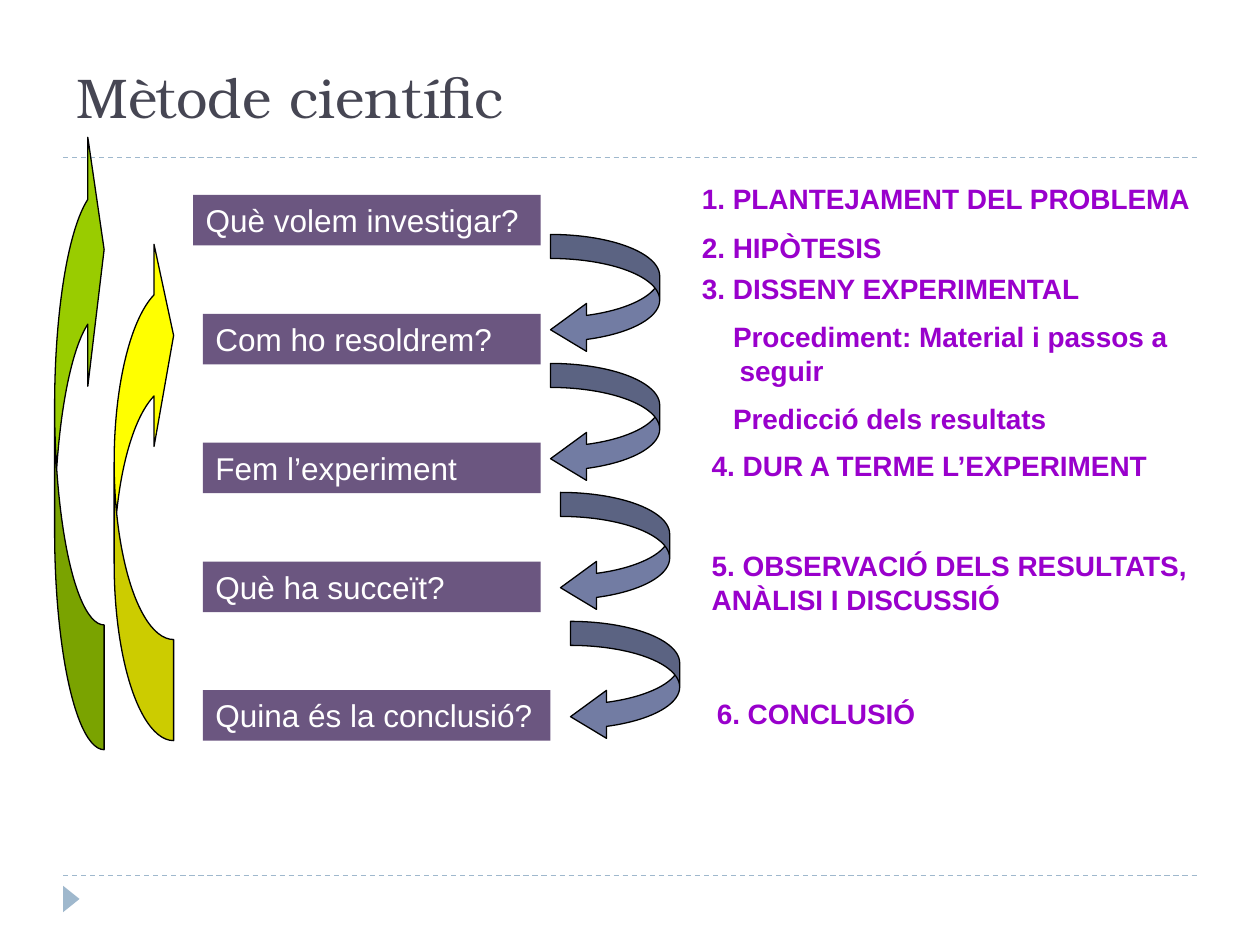
from lxml import etree
from pptx import Presentation
from pptx.dml.color import RGBColor
from pptx.enum.dml import MSO_LINE
from pptx.enum.shapes import MSO_CONNECTOR, MSO_SHAPE
from pptx.enum.text import MSO_ANCHOR, PP_ALIGN
from pptx.oxml.ns import qn
from pptx.util import Pt

RECTANGLE = MSO_SHAPE.RECTANGLE
TRIANGLE = MSO_SHAPE.ISOSCELES_TRIANGLE
CURVED_ARROW = MSO_SHAPE.CURVED_LEFT_ARROW
STRAIGHT = MSO_CONNECTOR.STRAIGHT
DASH = MSO_LINE.DASH
TOP, MIDDLE, BOTTOM = MSO_ANCHOR.TOP, MSO_ANCHOR.MIDDLE, MSO_ANCHOR.BOTTOM
LEFT = PP_ALIGN.LEFT

COLORS = {
    "title": "464653",
    "rule": "9FB8CD",
    "question": "6B5680",
    "question_text": "FFFFFF",
    "step": "9900CC",
    "next": "727CA3",
    "outer_return": "99CC00",
    "inner_return": "FFFF00",
    "outline": "000000",
}


def color(key):
    return RGBColor.from_string(COLORS[key])


class MethodSlide:
    body_font = "Arial"
    title_font = "TeX Gyre Bonum"

    def __init__(self, slide):
        self.slide = slide

    def style(self, paragraph, font, size, key, bold=False):
        paragraph.alignment = LEFT
        paragraph.font.name = font
        paragraph.font.size = Pt(size)
        paragraph.font.bold = bold
        paragraph.font.color.rgb = color(key)

    def shape(self, kind, left, top, width, height, fill):
        shape = self.slide.shapes.add_shape(
            kind, Pt(left), Pt(top), Pt(width), Pt(height))
        shape.shadow.inherit = False
        shape.fill.solid()
        shape.fill.fore_color.rgb = color(fill)
        shape.line.fill.background()
        return shape

    def rule(self, y):
        rule = self.slide.shapes.add_connector(
            STRAIGHT, Pt(36), Pt(y), Pt(684), Pt(y))
        rule.line.color.rgb = color("rule")
        rule.line.width = Pt(0.75)
        rule.line.dash_style = DASH
        etree.SubElement(rule._element.spPr, qn("a:effectLst"))

    def text_frame(self, left, top, width, height, anchor=TOP, wrap=True):
        frame = self.slide.shapes.add_textbox(
            Pt(left), Pt(top), Pt(width), Pt(height)).text_frame
        frame.word_wrap = wrap
        frame.vertical_anchor = anchor
        return frame

    def title(self, text):
        paragraph = self.text_frame(36.7, 0, 648, 77.8, BOTTOM).paragraphs[0]
        paragraph.text = text
        self.style(paragraph, self.title_font, 32, "title")

    def question(self, text, left, top, width):
        frame = self.shape(RECTANGLE, left, top, width, 28.8, "question").text_frame
        frame.word_wrap = True
        frame.vertical_anchor = MIDDLE
        frame.text = text
        self.style(frame.paragraphs[0], self.body_font, 18, "question_text")

    def arrow(self, left, top, width, height, adjustments, fill, rotation=0):
        arrow = self.shape(CURVED_ARROW, left, top, width, height, fill)
        arrow.rotation = rotation
        for i, value in enumerate(adjustments):
            arrow.adjustments[i] = value
        arrow.line.color.rgb = color("outline")
        arrow.line.width = Pt(0.75)

    def step(self, heading, left, top, width, height, details=(), wrap=True):
        """Add a numbered step, with indented detail paragraphs below it."""
        frame = self.text_frame(left, top, width, height, wrap=wrap)
        frame.text = "\n".join([heading, *details])
        for i, paragraph in enumerate(frame.paragraphs):
            if i:
                paragraph.space_before = Pt(8.5)
                properties = paragraph._p.get_or_add_pPr()
                properties.set("marL", str(Pt(21.6)))
                properties.set("indent", str(Pt(-3.8)))
            self.style(paragraph, self.body_font, 16, "step", bold=True)


def main():
    deck = Presentation()
    deck.slide_width, deck.slide_height = Pt(720), Pt(540)
    page = MethodSlide(deck.slides.add_slide(deck.slide_layouts[6]))

    for y in (500.4, 90):
        page.rule(y)
    page.shape(TRIANGLE, 33.2, 509, 15.1, 9.4, "rule").rotation = 90
    page.title("Mètode científic")

    questions = [
        ("Què volem investigar?", 110.4, 111.4, 198.6),
        ("Com ho resoldrem?", 116, 179.4, 193),
        ("Fem l’experiment", 116, 253, 193),
        ("Què ha succeït?", 116, 321, 193),
        ("Quina és la conclusió?", 116, 394.4, 198.6),
    ]
    for question in questions:
        page.question(*question)

    for i, left in enumerate((314.6, 314.6, 320.3, 326)):
        page.arrow(left, 134 + 73.7 * i, 62.4, 68.2, (0.22, 0.44, 0.33), "next")
    page.arrow(31.2, 71.4, 28.3, 357, (2.52, 5.03, 0.33), "outer_return", 180)
    page.arrow(65.2, 133.9, 34, 289.3, (1.7, 3.4, 0.33), "inner_return", 180)

    page.step("1. PLANTEJAMENT DEL PROBLEMA", 394, 100, 294, 26.6, wrap=False)
    page.step("2. HIPÒTESIS", 394, 128.5, 136, 26.6)
    page.step("3. DISSENY EXPERIMENTAL", 394, 151.4, 326, 103.7,
              ("Procediment: Material i passos a seguir",
               "Predicció dels resultats"))
    page.step("4. DUR A TERME L’EXPERIMENT", 399.6, 253, 320, 26.6)
    page.step("5. OBSERVACIÓ DELS RESULTATS, ANÀLISI I DISCUSSIÓ",
              399.6, 310, 320, 46)
    page.step("6. CONCLUSIÓ", 402.5, 394.6, 317, 26.6)

    deck.save("out.pptx")


if __name__ == "__main__":
    main()
